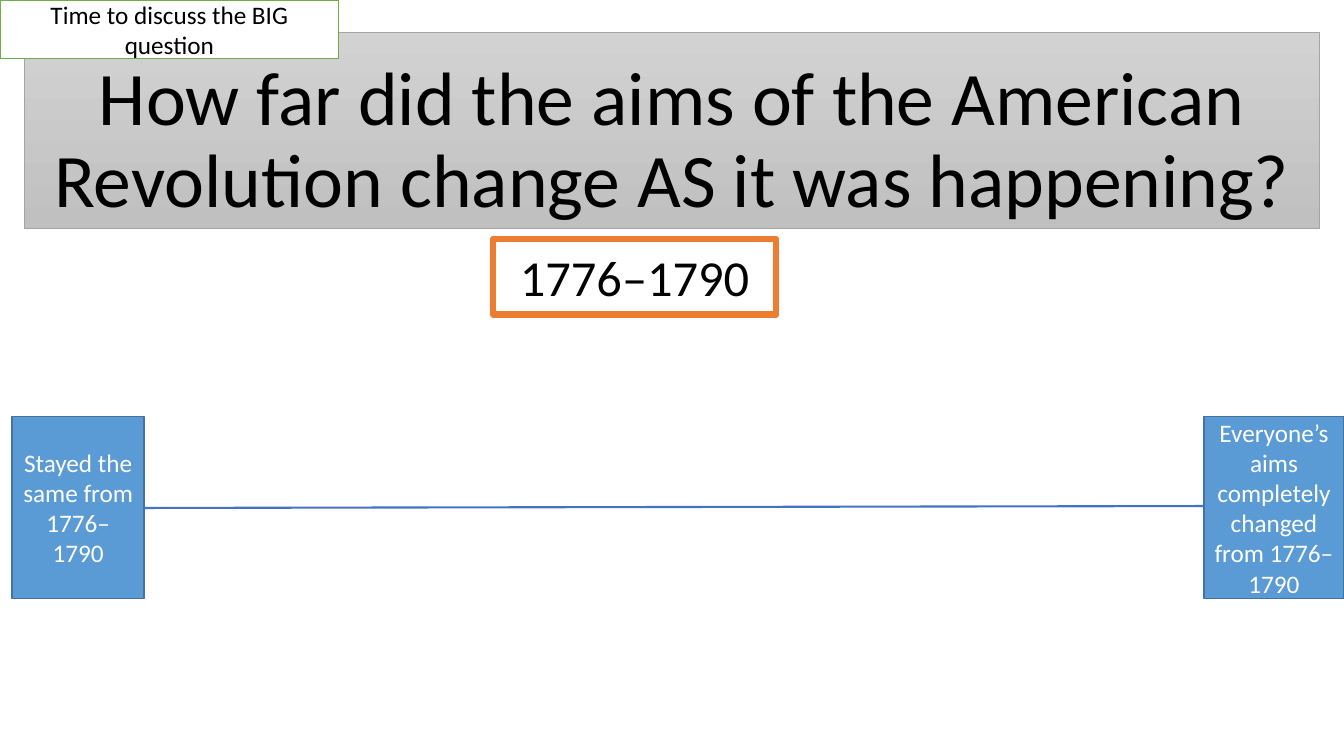
from pptx import Presentation
from pptx.dml.color import RGBColor
from pptx.enum.shapes import MSO_CONNECTOR as CONNECTOR, MSO_SHAPE as SHAPE
from pptx.enum.text import MSO_ANCHOR as ANCHOR, MSO_AUTO_SIZE as AUTO_SIZE, PP_ALIGN as ALIGN
from pptx.oxml.ns import qn
from pptx.util import Inches, Pt
from lxml import etree


def color(value):
    return RGBColor.from_string(value)


def set_outline(element, value, width):
    element.line.color.rgb = color(value)
    element.line.width = Pt(width)


def write(frame, wording, size, ink, anchor=ANCHOR.MIDDLE):
    frame.word_wrap = True
    frame.auto_size = AUTO_SIZE.NONE
    frame.vertical_anchor = anchor
    paragraph = frame.paragraphs[0]
    paragraph.alignment = ALIGN.CENTER
    run = paragraph.add_run()
    run.text = wording
    run.font.name = "Calibri"
    run.font.size = Pt(size)
    run.font.color.rgb = color(ink)
    return paragraph


def add_question(slide, wording):
    question = slide.shapes.title
    question.left, question.top = Inches(0.24), Inches(0.32)
    question.width, question.height = Inches(12.85), Inches(1.95)
    question.fill.gradient()
    question.fill.gradient_angle = 270
    for stop, shade in zip(question.fill.gradient_stops, ("D2D2D2", "C0C0C0")):
        stop.color.rgb = color(shade)
    set_outline(question, "A5A5A5", 0.5)
    paragraph = write(question.text_frame, wording, 54, "000000", ANCHOR.BOTTOM)
    paragraph.line_spacing = 0.9


def add_scale(slide, start, end, value, width):
    scale = slide.shapes.add_connector(
        CONNECTOR.STRAIGHT, *(Inches(n) for n in start + end))
    set_outline(scale, value, width)
    etree.SubElement(scale._element.spPr, qn("a:effectLst"))


def add_box(slide, place, wording, size, ink, fill, outline, width):
    box = slide.shapes.add_shape(SHAPE.RECTANGLE, *(Inches(n) for n in place))
    box.shadow.inherit = False
    box.fill.solid()
    box.fill.fore_color.rgb = color(fill)
    set_outline(box, outline, width)
    write(box.text_frame, wording, size, ink)


def main():
    deck = Presentation()
    deck.slide_width, deck.slide_height = Inches(13.33), Inches(7.5)
    slide = deck.slides.add_slide(deck.slide_layouts[5])

    add_question(slide, "How far did the aims of the American Revolution "
                        "change AS it was happening?")
    add_scale(slide, (1.2, 5.04), (12.22, 5.02), "4472C4", 1.5)

    extremes = (
        (0.12, 1.31, "Stayed the same from 1776–1790"),
        (11.94, 1.39, "Everyone’s aims completely changed from 1776–1790"),
    )
    for left, width, wording in extremes:
        add_box(slide, (left, 4.13, width, 1.81), wording, 18,
                "FFFFFF", "5B9BD5", "43739E", 1)

    add_box(slide, (4.89, 2.37, 2.81, 0.75), "1776–1790", 36,
            "000000", "FFFFFF", "ED7D31", 4.5)
    add_box(slide, (0, 0, 3.36, 0.58), "Time to discuss the BIG question", 18,
            "000000", "FFFFFF", "70AD47", 1)

    deck.save("out.pptx")


if __name__ == "__main__":
    main()
